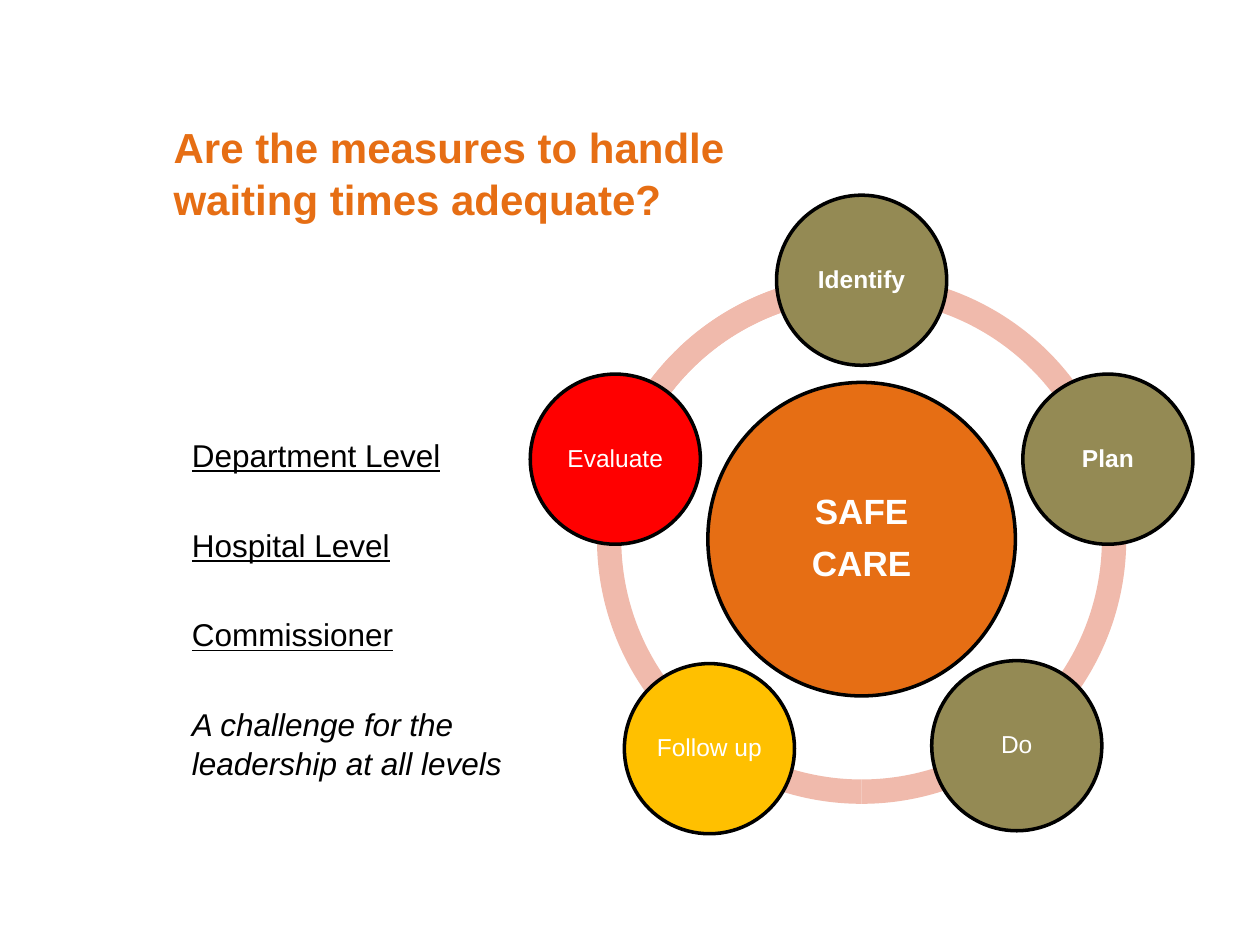
from math import cos, radians, sin

from pptx import Presentation
from pptx.dml.color import RGBColor
from pptx.enum.shapes import MSO_SHAPE as Shape
from pptx.enum.text import MSO_ANCHOR as Anchor, PP_ALIGN as Align
from pptx.util import Cm, Pt

ORANGE = RGBColor(0xE6, 0x6E, 0x14)
OLIVE = RGBColor(0x94, 0x8A, 0x54)
AMBER = RGBColor(0xFF, 0xC0, 0x00)
RED = RGBColor(0xFF, 0x00, 0x00)
PINK = RGBColor(0xF0, 0xBA, 0xAC)
BLACK = RGBColor(0x00, 0x00, 0x00)
WHITE = RGBColor(0xFF, 0xFF, 0xFF)

MID_X, MID_Y = 17.37, 10.87
RING, ORBIT, NODE = 10.67, 5.22, 3.43
ARCS = [(198, 270), (180, 270), (90, 180), (0, 90), (270, 0)]
NODES = [
    ("Identify", OLIVE, True, 0),
    ("Plan", OLIVE, True, 0),
    ("Do", OLIVE, False, 0.06),
    ("Follow up", AMBER, False, 0),
    ("Evaluate", RED, False, 0),
]
LEVELS = [
    ("Department Level", {"underline": True}),
    ("Hospital Level", {"underline": True}),
    ("Commissioner", {"underline": True}),
    ("A challenge for the leadership at all levels", {"italic": True}),
]


class Deck:
    """Holds the font and the current slide, and draws each kind of element."""

    def __init__(self, slide, font="Arial"):
        self.slide = slide
        self.font = font

    def fill_in(self, frame, lines, size, color, gap=0, pitch=1.0, align=Align.LEFT, inset=0):
        frame.word_wrap = True
        frame.margin_left = frame.margin_right = Cm(inset)
        frame.margin_top = frame.margin_bottom = Cm(inset)
        for i, (text, style) in enumerate(lines):
            para = frame.add_paragraph() if i else frame.paragraphs[0]
            para.alignment = align
            para.line_spacing = pitch
            para.space_before = Pt(gap if i else 0)
            run = para.add_run()
            run.text = text
            run.font.name = self.font
            run.font.size = Pt(size)
            run.font.color.rgb = color
            for key, value in style.items():
                if key == "bold":
                    run.font.bold = value
                elif key == "italic":
                    run.font.italic = value
                else:
                    run.font.underline = value

    def text(self, x, y, wide, high, lines, size, color, gap=0):
        box = self.slide.shapes.add_textbox(Cm(x), Cm(y), Cm(wide), Cm(high))
        self.fill_in(box.text_frame, lines, size, color, gap, pitch=1.04)

    def shape(self, kind, x, y, wide, high, fill):
        item = self.slide.shapes.add_shape(
            kind, Cm(x - wide / 2), Cm(y - high / 2), Cm(wide), Cm(high))
        item.shadow.inherit = False
        item.fill.solid()
        item.fill.fore_color.rgb = fill
        return item

    def arc(self, x, y, size, start, end):
        band = self.shape(Shape.BLOCK_ARC, x, y, size, size, PINK)
        band.line.fill.background()
        for i, value in enumerate((start * 0.6, end * 0.6, 0.046)):
            band.adjustments[i] = value

    def disc(self, x, y, wide, high, fill, lines, size, gap=0):
        disc = self.shape(Shape.OVAL, x, y, wide, high, fill)
        disc.line.color.rgb = BLACK
        disc.line.width = Pt(2)
        disc.text_frame.vertical_anchor = Anchor.MIDDLE
        self.fill_in(disc.text_frame, lines, size, WHITE, gap, 0.9, Align.CENTER, 0.05)


def main():
    show = Presentation()
    show.slide_width, show.slide_height = Cm(25.4), Cm(19.05)
    deck = Deck(show.slides.add_slide(show.slide_layouts[6]))

    title = "Are the measures to handle waiting times adequate?"
    deck.text(3.5, 2.41, 12.2, 4.4, [(title, {"bold": True})], 24, ORANGE)
    deck.text(3.87, 8.76, 6.83, 7.57, LEVELS, 18, BLACK, gap=28.8)

    for start, end in ARCS:
        deck.arc(MID_X, MID_Y, RING, start, end)
    core = [(word, {"bold": True}) for word in ("SAFE", "CARE")]
    deck.disc(MID_X, MID_Y, 6.2, 6.32, ORANGE, core, 20, gap=8)
    for i, (name, fill, bold, shift) in enumerate(NODES):
        turn = radians(360 / len(NODES) * i - 90)
        x = MID_X + ORBIT * cos(turn) + shift
        y = MID_Y + ORBIT * sin(turn) - shift
        deck.disc(x, y, NODE, NODE, fill, [(name, {"bold": bold})], 14)

    show.save("out.pptx")


if __name__ == "__main__":
    main()
